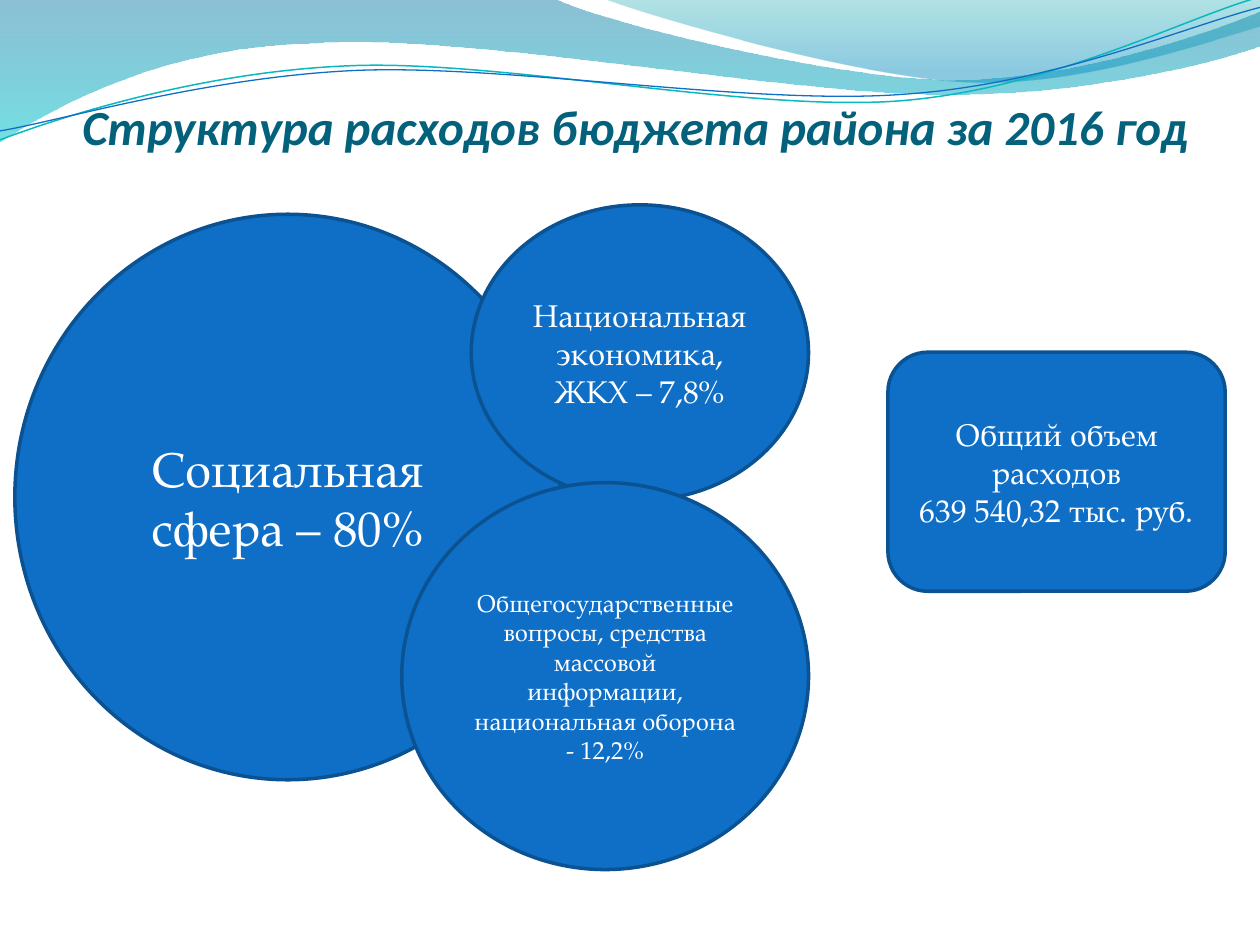
"""Build the slide on the structure of the district budget spending in 2016."""
from lxml import etree
from pptx import Presentation
from pptx import util as u
from pptx.dml.color import RGBColor
from pptx.enum import shapes, text
from pptx.oxml.ns import qn


def rgb(value):
    return RGBColor.from_string(value)


def add_wave(start, segments, closed):
    points = [(u.Cm(x), u.Cm(y)) for segment in segments
              for x, y in zip(segment[::2], segment[1::2])]
    builder = slide.shapes.build_freeform(u.Cm(start[0]), u.Cm(start[1]))
    builder.add_line_segments(points, close=closed)
    wave = builder.convert_to_shape()
    wave.shadow.inherit = False
    steps = iter(list(wave.element.iter(qn("a:lnTo"))))
    for segment in segments:
        first = next(steps)
        if len(segment) == 6:
            curve = etree.Element(qn("a:cubicBezTo"))
            first.addprevious(curve)
            for step in (first, next(steps), next(steps)):
                curve.append(step[0])
                step.getparent().remove(step)
    return wave


prs = Presentation()
prs.slide_width, prs.slide_height = u.Cm(25.4), u.Cm(19.05)
slide = prs.slides.add_slide(prs.slide_layouts[6])

bands = [
    ((0, 0),
     [(11.18, -0.03), (12.09, 0.43, 16.87, 1.6, 19.25, 1.6),
      (21.67, 1.6, 24.33, 0.66, 25.4, 0.23), (25.43, 0.91),
      (24.97, 1.12, 22.1, 1.93, 18.95, 1.9), (15.8, 1.9, 9.7, 0.71, 6.53, 0.86),
      (3.28, 0.91, 1.17, 2.11, -0.03, 2.87), (0, 0)],
     [(0, "0074A1", 45), (1, "00C6CF", 55)]),
    ((12.17, -0.03),
     [(12.93, 0.28, 17.32, 1.57, 19.53, 1.65),
      (21.74, 1.75, 24.41, 0.81, 25.4, 0.53), (25.4, 0), (12.17, -0.03)],
     [(0, "00A1A9", 30), (0.8, "008BBF", 45)]),
]
for start, segments, stops in bands:
    band = add_wave(start, segments, True)
    band.line.fill.background()
    band.fill.gradient()
    band.fill.gradient_angle = 270
    for stop, (position, color, opacity) in zip(band.fill.gradient_stops, stops):
        stop.position = position
        stop.color.rgb = rgb(color)
    for node, (position, color, opacity) in zip(band.element.iter(qn("a:srgbClr")), stops):
        etree.SubElement(node, qn("a:alpha"), val=str(opacity * 1000))

strands = [
    ((-0.05, 2.22),
     [(1.19, 1.82, 4.02, 1.04, 7.05, 1.06), (10.05, 1.07, 15.02, 2.37, 18.08, 2.29),
      (21.13, 2.2, 23.87, 0.91, 25.41, 0.55)], "0AB8BF", 0.85),
    ((-0.04, 2.04),
     [(1.16, 1.9, 4.18, 1.15, 7.2, 1.16), (10.25, 1.18, 15.13, 2.25, 18.19, 2.16),
      (21.21, 2.1, 23.93, 1.06, 25.45, 0.75)], "0F6FC6", 0.75),
]
for start, segments, color, width in strands:
    strand = add_wave(start, segments, False)
    strand.rotation = 357.3
    strand.fill.background()
    strand.line.color.rgb = rgb(color)
    strand.line.width = u.Pt(width)

title = slide.shapes.add_textbox(u.Cm(1.27), u.Cm(1.33), u.Cm(23.06), u.Cm(1.8))
heading = title.text_frame
heading.word_wrap = True
heading.vertical_anchor = text.MSO_ANCHOR.BOTTOM
heading.margin_left = heading.margin_right = heading.margin_bottom = 0
heading.text = "Структура расходов бюджета района за 2016 год"
heading.paragraphs[0].alignment = text.PP_ALIGN.CENTER
font = heading.paragraphs[0].runs[0].font
font.name, font.size, font.bold, font.italic = "Calibri", u.Pt(28), True, True
font.color.rgb = rgb("04617B")

oval = shapes.MSO_SHAPE.OVAL
spending = [
    (oval, 0.3, 4.32, 11, 11.4, 28, "Социальная сфера – 80%"),
    (oval, 9.5, 4.13, 6.8, 5.96, 18, "Национальная экономика, ЖКХ – 7,8%"),
    (oval, 8.1, 9.73, 8.2, 7.8, 14,
     "Общегосударственные вопросы, средства массовой информации, "
     "национальная оборона - 12,2%"),
    (shapes.MSO_SHAPE.ROUNDED_RECTANGLE, 17.9, 7.1, 6.8, 4.82, 18,
     "Общий объем расходов\n639 540,32 тыс. руб."),
]
for kind, left, top, width, height, size, wording in spending:
    share = slide.shapes.add_shape(kind, u.Cm(left), u.Cm(top), u.Cm(width), u.Cm(height))
    share.shadow.inherit = False
    share.fill.solid()
    share.fill.fore_color.rgb = rgb("0F6FC6")
    share.line.color.rgb = rgb("0B5292")
    share.line.width = u.Pt(2)
    label = share.text_frame
    label.word_wrap = True
    label.vertical_anchor = text.MSO_ANCHOR.MIDDLE
    label.text = wording
    for paragraph in label.paragraphs:
        paragraph.alignment = text.PP_ALIGN.CENTER
        font = paragraph.runs[0].font
        font.name, font.size = "TeX Gyre Pagella", u.Pt(size)
        font.color.rgb = rgb("FFFFFF")

prs.save("out.pptx")
